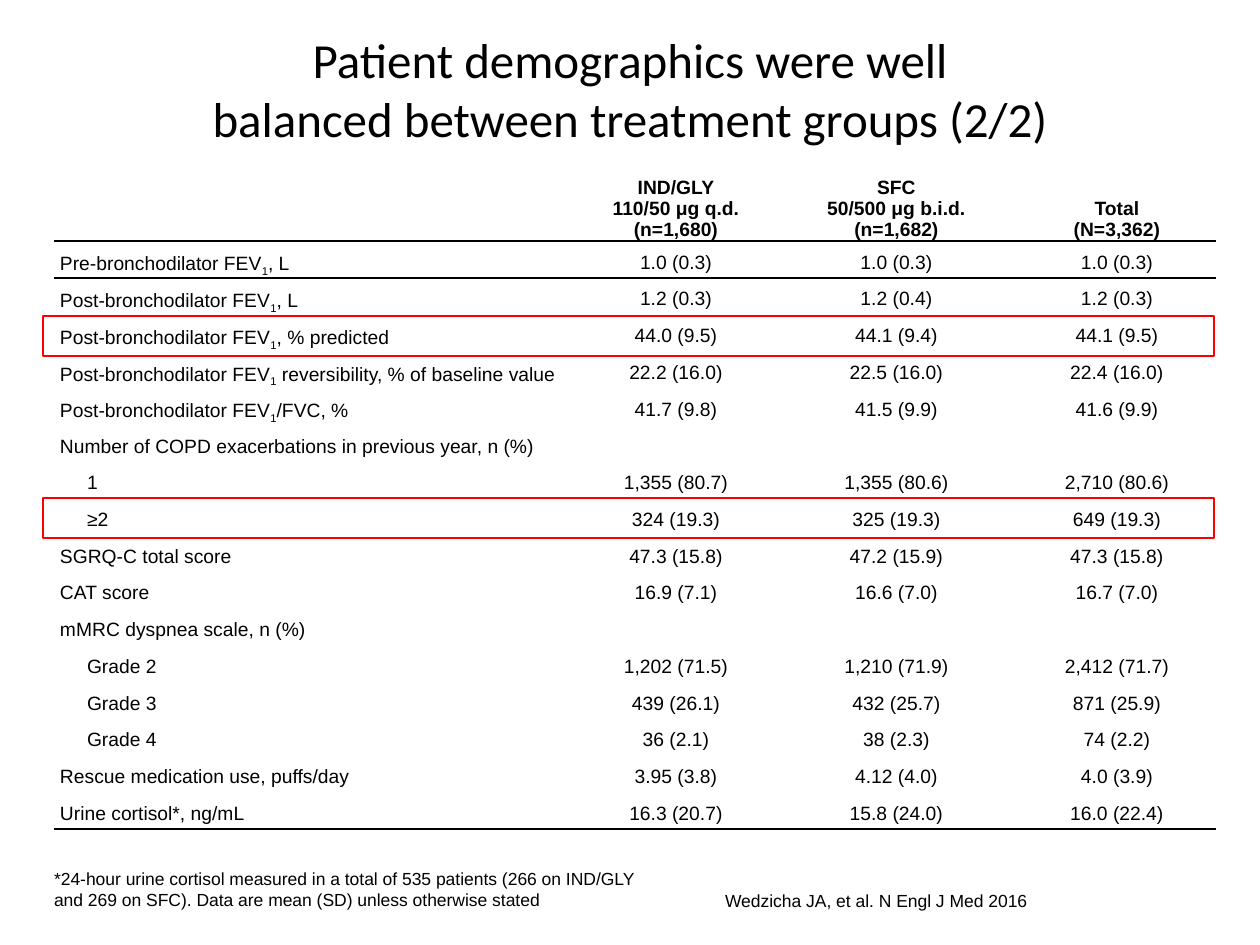
"""Builds the patient demographics slide with its table, highlights and footnotes."""
import pptx
import pptx.dml.color
import pptx.enum.shapes
import pptx.enum.text
import pptx.oxml.ns
import pptx.util
from lxml import etree

PX = 914400 // 126
COLORS = {"ink": "000000", "paper": "FFFFFF", "highlight": "FF0000"}
ALIGN = pptx.enum.text.PP_ALIGN
ANCHOR = pptx.enum.text.MSO_ANCHOR
INDENT = 27


def rgb(name):
    return pptx.dml.color.RGBColor.from_string(COLORS[name])


def style(para, font, **layout):
    for name, value in layout.items():
        setattr(para, name, value)
    for span in para.runs:
        for name, value in font.items():
            setattr(span.font, name, value)
        span.font.color.rgb = rgb("ink")


deck = pptx.Presentation()
deck.slide_width, deck.slide_height = 1260 * PX, 945 * PX
page = deck.slides.add_slide(deck.slide_layouts[5])

title = page.shapes.title
title.left, title.top, title.width, title.height = 54 * PX, 18 * PX, 1152 * PX, 140 * PX
title.text_frame.text = "Patient demographics were well\vbalanced between treatment groups (2/2)"
title.text_frame.auto_size = pptx.enum.text.MSO_AUTO_SIZE.NONE
title.text_frame.vertical_anchor = ANCHOR.MIDDLE
style(title.text_frame.paragraphs[0], {"name": "Calibri", "size": pptx.util.Pt(28)},
      alignment=ALIGN.CENTER)

rows = [
    ("", "IND/GLY\n110/50 μg q.d.\n(n=1,680)", "SFC\n50/500 μg b.i.d.\n(n=1,682)", "Total\n(N=3,362)"),
    ("Pre-bronchodilator FEV_1_, L", "1.0 (0.3)", "1.0 (0.3)", "1.0 (0.3)"),
    ("Post-bronchodilator FEV_1_, L", "1.2 (0.3)", "1.2 (0.4)", "1.2 (0.3)"),
    ("Post-bronchodilator FEV_1_, % predicted", "44.0 (9.5)", "44.1 (9.4)", "44.1 (9.5)"),
    ("Post-bronchodilator FEV_1_ reversibility, % of baseline value",
     "22.2 (16.0)", "22.5 (16.0)", "22.4 (16.0)"),
    ("Post-bronchodilator FEV_1_/FVC, %", "41.7 (9.8)", "41.5 (9.9)", "41.6 (9.9)"),
    ("Number of COPD exacerbations in previous year, n (%)", "", "", ""),
    ("1", "1,355 (80.7)", "1,355 (80.6)", "2,710 (80.6)"),
    ("≥2", "324 (19.3)", "325 (19.3)", "649 (19.3)"),
    ("SGRQ-C total score", "47.3 (15.8)", "47.2 (15.9)", "47.3 (15.8)"),
    ("CAT score", "16.9 (7.1)", "16.6 (7.0)", "16.7 (7.0)"),
    ("mMRC dyspnea scale, n (%)", "", "", ""),
    ("Grade 2", "1,202 (71.5)", "1,210 (71.9)", "2,412 (71.7)"),
    ("Grade 3", "439 (26.1)", "432 (25.7)", "871 (25.9)"),
    ("Grade 4", "36 (2.1)", "38 (2.3)", "74 (2.2)"),
    ("Rescue medication use, puffs/day", "3.95 (3.8)", "4.12 (4.0)", "4.0 (3.9)"),
    ("Urine cortisol*, ng/mL", "16.3 (20.7)", "15.8 (24.0)", "16.0 (22.4)"),
]
indented_rows = {7, 8, 12, 13, 14}
ruled_edges = {1, 2, len(rows)}

table = page.shapes.add_table(len(rows), 4, 55 * PX, 175 * PX, 1160 * PX, 654 * PX).table
table.first_row = table.horz_banding = False
for column, width in zip(table.columns, (523, 196, 245, 196)):
    column.width = width * PX
for number, row in enumerate(table.rows):
    row.height = 588 * PX // 16 if number else 66 * PX

for number, texts in enumerate(rows):
    for position, text in enumerate(texts):
        cell = table.cell(number, position)
        cell.margin_top = cell.margin_bottom = 0
        cell.margin_left = cell.margin_right = 5 * PX
        if position == 0 and number in indented_rows:
            cell.margin_left = (5 + INDENT) * PX
        cell.vertical_anchor = ANCHOR.TOP if number else ANCHOR.BOTTOM
        cell.fill.solid()
        cell.fill.fore_color.rgb = rgb("paper")

        cell.text = text.replace("_", "")
        if "_" in text:
            para = cell.text_frame.paragraphs[0]
            para.clear()
            for order, part in enumerate(text.split("_")):
                span = para.add_run()
                span.text = part
                if order == 1:
                    span.font._element.set("baseline", "-25000")
        for para in cell.text_frame.paragraphs:
            style(para, {"name": "Arial", "size": pptx.util.Pt(11), "bold": number == 0},
                  alignment=ALIGN.CENTER if position else ALIGN.LEFT,
                  line_spacing=1.5 if number else 1.0)
            if not text:
                etree.SubElement(para._p, pptx.oxml.ns.qn("a:endParaRPr"), sz="1100")

        properties = cell._tc.get_or_add_tcPr()
        edges = {"L": None, "R": None, "T": number, "B": number + 1}
        for order, (side, edge) in enumerate(edges.items()):
            ruled = edge in ruled_edges
            border = etree.Element(pptx.oxml.ns.qn("a:ln" + side),
                                   w=str(pptx.util.Pt(1.5 if ruled else 1)))
            fill = etree.SubElement(border, pptx.oxml.ns.qn("a:solidFill"))
            etree.SubElement(fill, pptx.oxml.ns.qn("a:srgbClr"),
                             val=COLORS["ink" if ruled else "paper"])
            properties.insert(order, border)

table.cell(6, 0).merge(table.cell(6, 3))

for top in (316, 498):
    highlight = page.shapes.add_shape(pptx.enum.shapes.MSO_SHAPE.RECTANGLE,
                                      43 * PX, top * PX, 1171 * PX, 40 * PX)
    highlight.shadow.inherit = False
    highlight.fill.background()
    highlight.line.color.rgb = rgb("highlight")
    highlight.line.width = pptx.util.Pt(1.5)

notes = [
    ((451, 873, 576, 38), ALIGN.RIGHT, "Wedzicha JA, et al. N Engl J Med 2016"),
    ((54, 852, 653, 58), ALIGN.LEFT,
     "*24-hour urine cortisol measured in a total of 535 patients (266 on IND/GLY\v"
     "and 269 on SFC). Data are mean (SD) unless otherwise stated"),
]
for place, alignment, text in notes:
    box = page.shapes.add_textbox(*(length * PX for length in place))
    frame = box.text_frame
    frame.word_wrap = True
    frame.vertical_anchor = ANCHOR.BOTTOM
    frame.margin_left = frame.margin_right = frame.margin_top = frame.margin_bottom = 0
    frame.text = text
    style(frame.paragraphs[0], {"name": "Arial", "size": pptx.util.Pt(10)},
          alignment=alignment, space_after=pptx.util.Pt(4))

deck.save("out.pptx")
